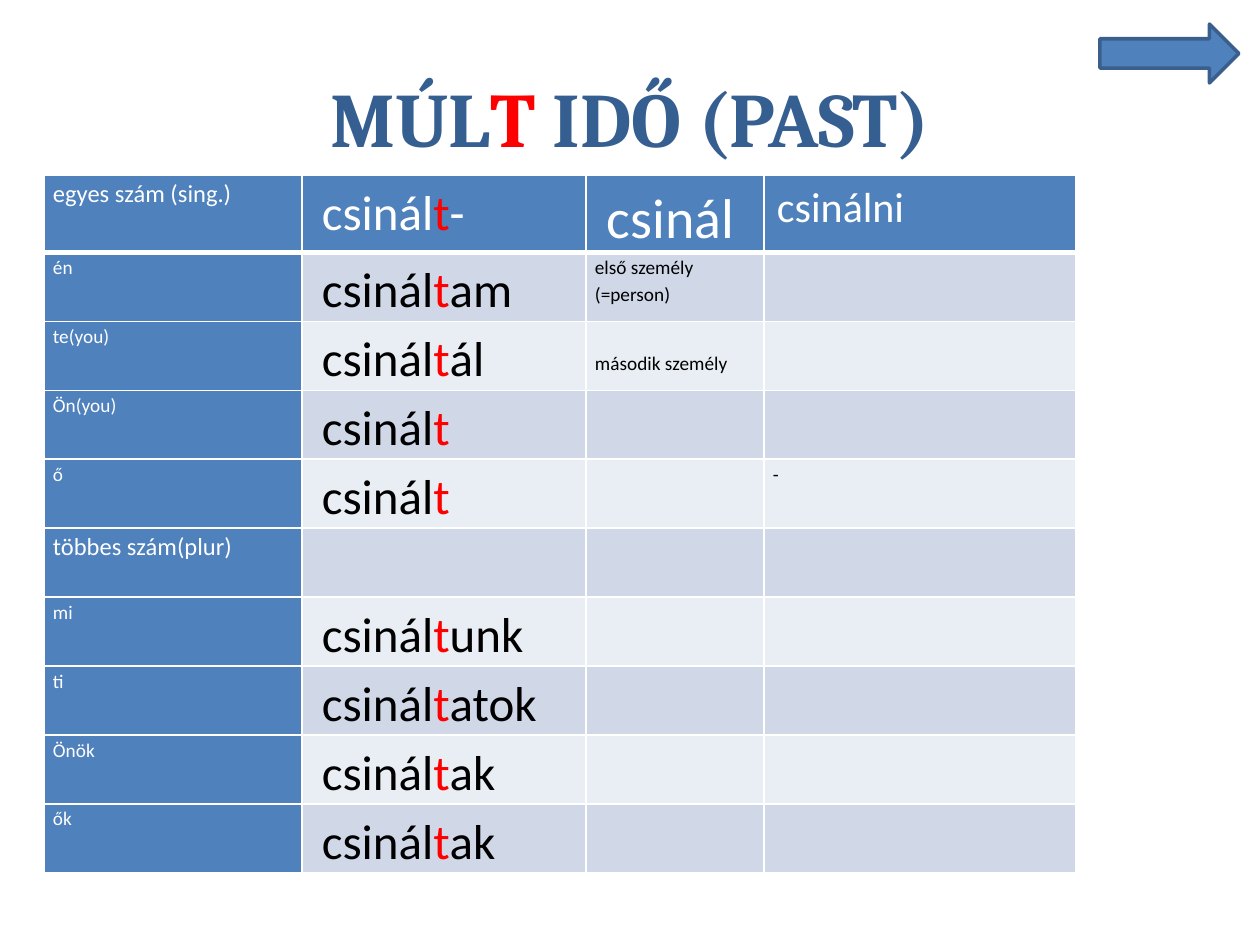
from dataclasses import dataclass
from typing import NamedTuple

from lxml.etree import SubElement
from pptx import Presentation
from pptx.dml.color import RGBColor
from pptx.enum.shapes import MSO_SHAPE
from pptx.enum.text import MSO_ANCHOR, PP_ALIGN
from pptx.oxml.ns import qn
from pptx.util import Emu, Pt


@dataclass(frozen=True)
class Theme:
    head: str = "Cambria"
    body: str = "Calibri"
    white: str = "FFFFFF"
    black: str = "000000"
    red: str = "FF0000"
    navy: str = "365F91"
    blue: str = "4F81BD"
    edge: str = "3A5F8C"
    bands: tuple[str, str] = ("D0D8E8", "E9EDF4")
    title: int = 44
    stem: int = 32
    verb: int = 28
    base: int = 24
    group: int = 14
    small: int = 11


class Box(NamedTuple):
    left: int
    top: int
    width: int
    height: int


class Word(NamedTuple):
    text: str
    size: int
    color: str


class Entry(NamedTuple):
    """Text of one cell with its left and top inset."""
    words: tuple[Word, ...] = ()
    left: int = 9
    top: int = 0


class Person(NamedTuple):
    label: str
    ending: str | None = None
    note: Entry = Entry()
    extra: Entry = Entry()
    size: int = Theme.small


THEME = Theme()
SCALE = 914400 / 126
COLS = (258, 284, 178, 312)
HEAD, ROW = 77, 69
INSET = 9
INDENT = 20


def px(count: int) -> Emu:
    return Emu(round(count * SCALE))


def place(box: Box) -> list[Emu]:
    return [px(side) for side in box]


def write(para, words, font: str, bold: bool = False) -> None:
    for word in words:
        run = para.add_run()
        run.text = word.text
        run.font.name = font
        run.font.size = Pt(word.size)
        run.font.bold = bold
        run.font.color.rgb = RGBColor.from_string(word.color)


def small(text: str, top: int = 0) -> Entry:
    return Entry((Word(text, THEME.small, THEME.black),), top=top)


def past(ending: str, color: str) -> Entry:
    """The verb with its past tense mark in red."""
    words = [Word("csinál", THEME.verb, color), Word("t", THEME.verb, THEME.red)]
    if ending:
        words.append(Word(ending, THEME.verb, color))
    return Entry(tuple(words), INDENT)


PEOPLE = (
    Person("én", "am", small("első személy (=person)")),
    Person("te(you)", "ál", small("második személy", 27)),
    Person("Ön(you)", ""),
    Person("ő", "", extra=small("-")),
    Person("többes szám(plur)", size=THEME.group),
    Person("mi", "unk"),
    Person("ti", "atok"),
    Person("Önök", "ak"),
    Person("ők", "ak"),
)


def border(cell, base: int) -> None:
    """White cell edges, with the bottom one base points wide."""
    props = cell._tc.get_or_add_tcPr()
    for side, width in (("L", 1), ("R", 1), ("T", 1), ("B", base)):
        line = SubElement(props, qn(f"a:ln{side}"), w=str(Pt(width)))
        fill = SubElement(line, qn("a:solidFill"))
        SubElement(fill, qn("a:srgbClr"), val=THEME.white)


def fill_cell(cell, entry: Entry, color: str, base: int = 1) -> None:
    border(cell, base)
    cell.fill.solid()
    cell.fill.fore_color.rgb = RGBColor.from_string(color)
    cell.margin_left, cell.margin_right = px(entry.left), px(INSET)
    cell.margin_top, cell.margin_bottom = px(entry.top), 0
    para = cell.text_frame.paragraphs[0]
    para.line_spacing = 1.15
    para.space_before = Pt(10)
    write(para, entry.words, THEME.body)


def add_title(slide, box: Box) -> None:
    frame = slide.shapes.add_textbox(*place(box)).text_frame
    frame.word_wrap = True
    frame.vertical_anchor = MSO_ANCHOR.MIDDLE
    para = frame.paragraphs[0]
    para.alignment = PP_ALIGN.CENTER
    pairs = (("MÚL", THEME.navy), ("T", THEME.red), (" IDŐ (PAST)", THEME.navy))
    words = [Word(text, THEME.title, color) for text, color in pairs]
    write(para, words, THEME.head, True)


def add_forms(slide, left: int, top: int) -> None:
    """Table of the past tense forms by person."""
    count = len(PEOPLE)
    box = Box(left, top, sum(COLS), HEAD + ROW * count)
    table = slide.shapes.add_table(count + 1, len(COLS), *place(box)).table
    table.first_row = table.horz_banding = False
    for col, width in zip(table.columns, COLS):
        col.width = px(width)
    for i, row in enumerate(table.rows):
        row.height = px(ROW if i else HEAD)

    heads = (
        Entry((Word("egyes szám (sing.)", THEME.group, THEME.white),)),
        past("-", THEME.white),
        Entry((Word("csinál", THEME.stem, THEME.white),), INDENT + 1),
        Entry((Word("csinálni", THEME.base, THEME.white),), 13),
    )
    for col, entry in enumerate(heads):
        fill_cell(table.cell(0, col), entry, THEME.blue, 3)

    for i, person in enumerate(PEOPLE):
        label = Entry((Word(person.label, person.size, THEME.white),))
        has = person.ending is not None
        form = past(person.ending, THEME.black) if has else Entry()
        band = THEME.bands[i % 2]
        for col, entry in enumerate((label, form, person.note, person.extra)):
            fill_cell(table.cell(i + 1, col), entry, band if col else THEME.blue)


def add_arrow(slide, box: Box) -> None:
    arrow = slide.shapes.add_shape(MSO_SHAPE.RIGHT_ARROW, *place(box))
    arrow.shadow.inherit = False
    arrow.fill.solid()
    arrow.fill.fore_color.rgb = RGBColor.from_string(THEME.blue)
    arrow.line.color.rgb = RGBColor.from_string(THEME.edge)
    arrow.line.width = Pt(2)


def main() -> None:
    deck = Presentation()
    deck.slide_width, deck.slide_height = px(1260), px(945)
    slide = deck.slides.add_slide(deck.slide_layouts[6])
    add_title(slide, Box(63, 38, 1134, 158))
    add_forms(slide, 44, 175)
    add_arrow(slide, Box(1100, 24, 139, 59))
    deck.save("out.pptx")


if __name__ == "__main__":
    main()
